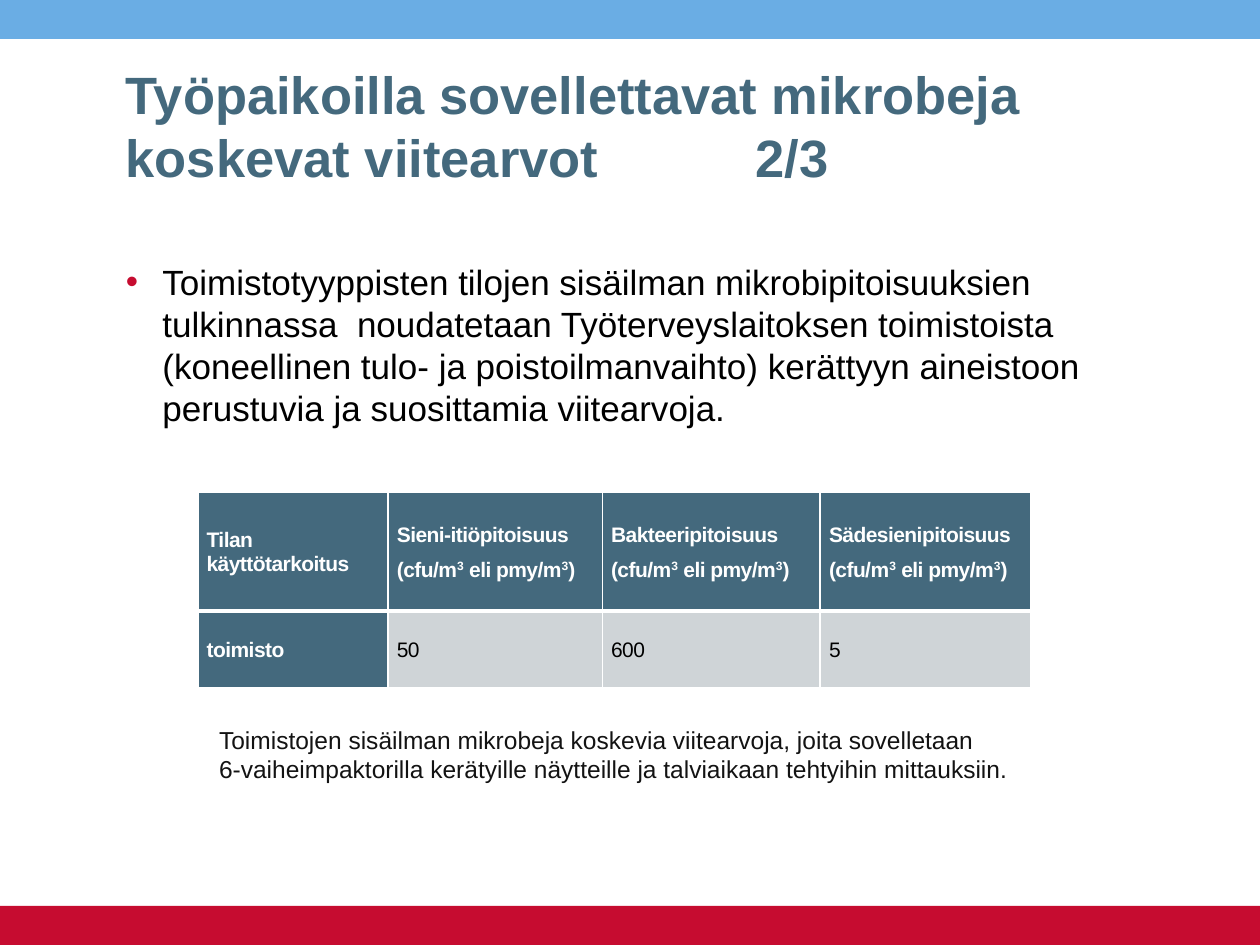
import pptx
import pptx.util
import pptx.dml.color
import pptx.enum.shapes
import pptx.enum.text
import pptx.oxml
import pptx.oxml.ns
from pptx.util import Inches

SLATE = "44697D"
RED = "C60C30"
WHITE = "FFFFFF"
BLACK = "000000"
ANCHOR = pptx.enum.text.MSO_ANCHOR
ALIGN = pptx.enum.text.PP_ALIGN


def rgb(color):
    return pptx.dml.color.RGBColor.from_string(color)


def style(paragraph, size, color, bold=False):
    font = paragraph.font
    font.name = "Arial"
    font.size = pptx.util.Pt(size)
    font.bold = bold
    font.color.rgb = rgb(color)


def add_band(slide, top, color):
    band = slide.shapes.add_shape(
        pptx.enum.shapes.MSO_SHAPE.RECTANGLE,
        Inches(0), Inches(top), Inches(10), Inches(0.31))
    band.shadow.inherit = False
    band.fill.solid()
    band.fill.fore_color.rgb = rgb(color)
    band.line.fill.background()


def add_text(slide, left, top, width, height, text, anchor):
    frame = slide.shapes.add_textbox(
        Inches(left), Inches(top), Inches(width), Inches(height)).text_frame
    frame.word_wrap = True
    frame.vertical_anchor = anchor
    paragraph = frame.paragraphs[0]
    paragraph.text = text
    return paragraph


def add_bullet(paragraph, color):
    properties = paragraph._p.get_or_add_pPr()
    properties.set("marL", str(Inches(0.29)))
    properties.set("indent", str(-Inches(0.29)))
    namespace = pptx.oxml.ns.nsdecls("a")
    for xml in (f'<a:buClr {namespace}><a:srgbClr val="{color}"/></a:buClr>',
                f'<a:buFont {namespace} typeface="Arial"/>',
                f'<a:buChar {namespace} char="•"/>'):
        properties.append(pptx.oxml.parse_xml(xml))


def add_borders(cell, top, bottom):
    properties = cell._tc.get_or_add_tcPr()
    for side, points in (("L", 1), ("R", 1), ("T", top), ("B", bottom)):
        properties.append(pptx.oxml.parse_xml(
            f'<a:ln{side} {pptx.oxml.ns.nsdecls("a")} w="{pptx.util.Pt(points)}">'
            f'<a:solidFill><a:srgbClr val="{WHITE}"/></a:solidFill></a:ln{side}>'))


def write_cell(cell, lines, fill, color, bold, align):
    cell.fill.solid()
    cell.fill.fore_color.rgb = rgb(fill)
    cell.vertical_anchor = ANCHOR.MIDDLE
    cell.margin_left = cell.margin_right = Inches(0.07)
    cell.margin_top = cell.margin_bottom = 0
    for index, line in enumerate(lines):
        frame = cell.text_frame
        paragraph = frame.add_paragraph() if index else frame.paragraphs[0]
        paragraph.alignment = align
        paragraph.line_spacing = pptx.util.Pt(14)
        paragraph.space_after = pptx.util.Pt(6)
        style(paragraph, 12, color, bold)
        paragraph.font._rPr.set("spc", "-30")
        for position, part in enumerate(line.split("^")):
            run = paragraph.add_run()
            run.text = part
            if position % 2:
                run.font._rPr.set("baseline", "30000")


def add_reference_table(slide):
    unit = "(cfu/m^3^ eli pmy/m^3^)"
    rows = [
        [["Tilan käyttötarkoitus"], ["Sieni-itiöpitoisuus", unit],
         ["Bakteeripitoisuus", unit], ["Sädesienipitoisuus", unit]],
        [["toimisto"], ["50"], ["600"], ["5"]],
    ]
    table = slide.shapes.add_table(
        2, 4, Inches(1.57), Inches(3.91), Inches(6.61), Inches(1.55)).table
    table.first_row = table.horz_banding = False
    for column, width in zip(table.columns, (1.51, 1.7, 1.73, 1.67)):
        column.width = Inches(width)
    for row, height in zip(table.rows, (0.94, 0.61)):
        row.height = Inches(height)
    for r, row in enumerate(rows):
        for c, lines in enumerate(row):
            cell = table.cell(r, c)
            heading = r == 0 or c == 0
            add_borders(cell, 3 if r else 1, 1 if r else 3)
            write_cell(cell, lines,
                       SLATE if heading else "CFD4D7",
                       WHITE if heading else BLACK, heading,
                       ALIGN.LEFT if len(lines) > 1 else ALIGN.JUSTIFY)


def main():
    presentation = pptx.Presentation()
    presentation.slide_width = Inches(10)
    presentation.slide_height = Inches(7.5)
    slide = presentation.slides.add_slide(presentation.slide_layouts[6])

    add_band(slide, 0, "6AADE4")
    add_band(slide, 7.19, RED)

    title = add_text(
        slide, 0.9, 0.36, 8.19, 1.18,
        "Työpaikoilla sovellettavat mikrobeja koskevat viitearvot \t\t\t2/3",
        ANCHOR.BOTTOM)
    style(title, 30, SLATE, True)

    guidance = add_text(
        slide, 0.9, 2.02, 8.19, 4.8,
        "Toimistotyyppisten tilojen sisäilman mikrobipitoisuuksien "
        "tulkinnassa  noudatetaan Työterveyslaitoksen toimistoista "
        "(koneellinen tulo- ja poistoilmanvaihto) kerättyyn aineistoon "
        "perustuvia ja suosittamia viitearvoja.",
        ANCHOR.TOP)
    add_bullet(guidance, RED)
    style(guidance, 20, BLACK)

    add_reference_table(slide)

    caption = add_text(
        slide, 1.64, 5.7, 6.58, 0.57,
        "Toimistojen sisäilman mikrobeja koskevia viitearvoja, joita sovelletaan \v"
        "6-vaiheimpaktorilla kerätyille näytteille ja talviaikaan tehtyihin mittauksiin.",
        ANCHOR.MIDDLE)
    style(caption, 14, "131313")

    presentation.save("out.pptx")


if __name__ == "__main__":
    main()
